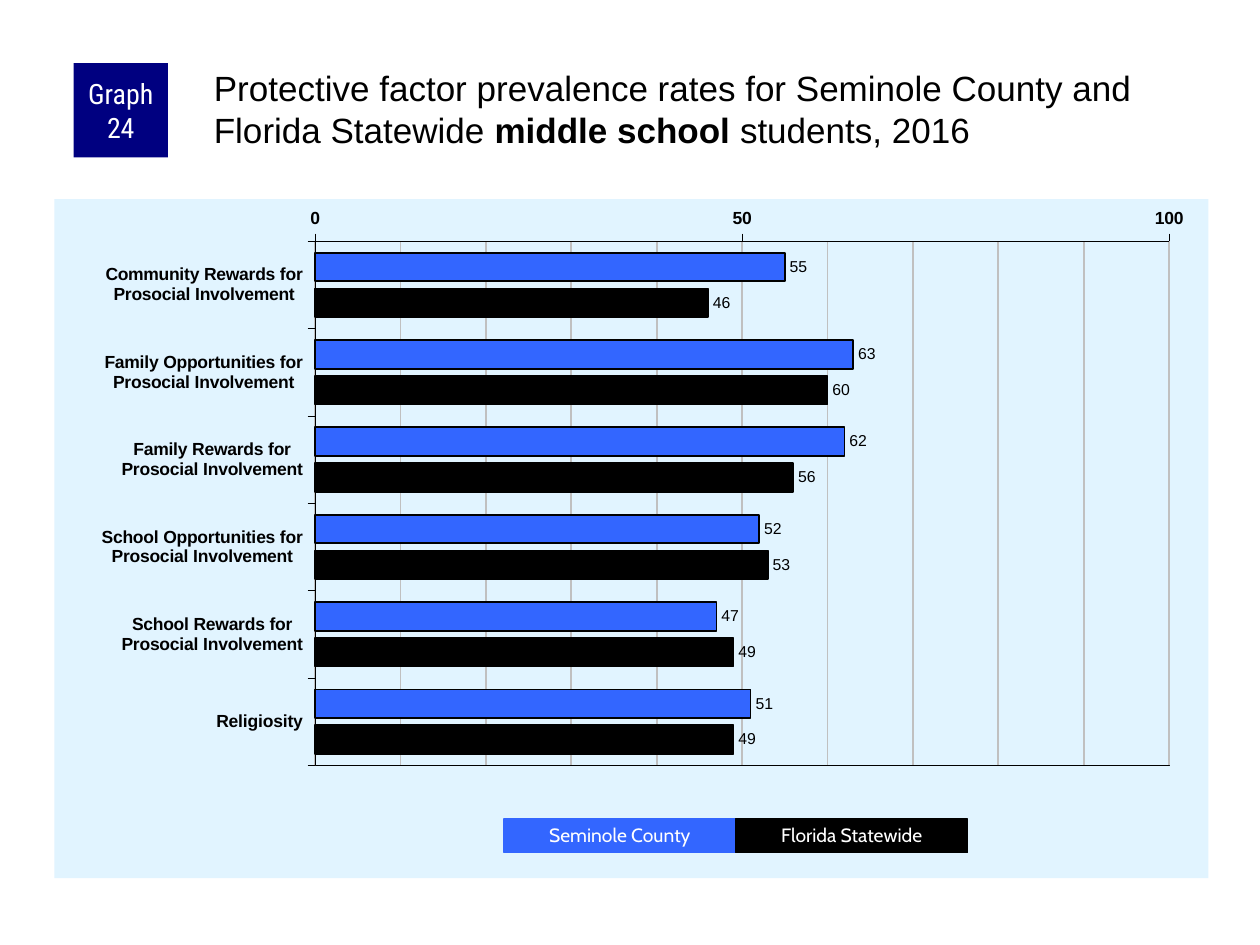
from copy import deepcopy
from dataclasses import dataclass

from pptx import Presentation
from pptx.chart.data import CategoryChartData
from pptx.dml.color import RGBColor as RGB
from pptx.enum.chart import XL_AXIS_CROSSES as Crosses
from pptx.enum.chart import XL_CHART_TYPE as ChartType
from pptx.enum.chart import XL_LABEL_POSITION as LabelPos
from pptx.enum.chart import XL_TICK_LABEL_POSITION as TickLabels
from pptx.enum.chart import XL_TICK_MARK as Tick
from pptx.enum.shapes import MSO_SHAPE as Shape
from pptx.enum.text import MSO_ANCHOR as Anchor
from pptx.enum.text import MSO_AUTO_SIZE as AutoSize
from pptx.enum.text import PP_ALIGN as Align
from pptx.oxml import parse_xml
from pptx.oxml.ns import nsdecls, qn
from pptx.util import Pt


@dataclass(frozen=True)
class Theme:
    """Colours, fonts and type sizes of the slide."""
    ink: str = "000000"
    paper: str = "FFFFFF"
    badge: str = "000080"
    county: str = "3366FF"
    state: str = "000000"
    panel: str = "E1F4FF"
    grid: str = "C0C0C0"
    body_font: str = "Arial"
    badge_font: str = "Roboto Condensed"
    legend_font: str = "Cabin"
    title_size: float = 20
    badge_size: float = 16
    legend_size: float = 11
    chart_size: float = 11.8
    axis_size: float = 10
    label_size: float = 9


T = Theme()
FACTORS = [
    ("Community Rewards for\nProsocial Involvement", 55, 46),
    ("Family Opportunities for\nProsocial Involvement", 63, 60),
    ("Family Rewards for\nProsocial Involvement", 62, 56),
    ("School Opportunities for\nProsocial Involvement", 52, 53),
    ("School Rewards for\nProsocial Involvement", 47, 49),
    ("Religiosity", 51, 49),
]
REGIONS = [("Seminole County", T.county), ("Florida Statewide", T.state)]
TITLE = [
    ("Protective factor prevalence rates for Seminole County and Florida Statewide ", False),
    ("middle school ", True),
    ("students, 2016", False),
]
PLOT = {"x": 0.226, "y": 0.062, "w": 0.74, "h": 0.772}


def set_font(font, name, size, color, bold=False):
    """Format a font."""
    font.name, font.size, font.bold = name, Pt(size), bold
    font.color.rgb = RGB.from_string(color)


def set_line(line, color, width):
    """Give a line its colour and width."""
    line.color.rgb = RGB.from_string(color)
    line.width = Pt(width)


def set_insets(tf, left, top, right, bottom):
    """Set the margins of a text frame in points."""
    tf.margin_left, tf.margin_top = Pt(left), Pt(top)
    tf.margin_right, tf.margin_bottom = Pt(right), Pt(bottom)


def add_box(s, box, text, fill, font, size):
    """Add a filled rectangle with centred text."""
    sp = s.shapes.add_shape(Shape.RECTANGLE, *map(Pt, box))
    sp.shadow.inherit = False
    sp.fill.solid()
    sp.fill.fore_color.rgb = RGB.from_string(fill)
    sp.line.fill.background()
    tf = sp.text_frame
    tf.word_wrap, tf.vertical_anchor = True, Anchor.MIDDLE
    p = tf.paragraphs[0]
    p.text, p.alignment = text, Align.CENTER
    set_font(p.runs[0].font, font, size, T.paper)
    return sp


def add_badge(s, box):
    """Add the graph number badge."""
    sp = add_box(s, box, "Graph 24", T.badge, T.badge_font, T.badge_size)
    set_insets(sp.text_frame, 3.6, 0, 3.6, 0)


def add_title(s, box):
    """Place and fill the title placeholder."""
    sp = s.shapes.title
    sp.left, sp.top, sp.width, sp.height = map(Pt, box)
    tf = sp.text_frame
    tf.word_wrap, tf.auto_size = True, AutoSize.NONE
    tf.vertical_anchor = Anchor.TOP
    set_insets(tf, 2.2, 2.2, 0, 0)
    p = tf.paragraphs[0]
    p.alignment = Align.LEFT
    for text, bold in TITLE:
        r = p.add_run()
        r.text = text
        set_font(r.font, T.body_font, T.title_size, T.ink, bold)


def add_legend(s, box):
    """Add one coloured key per region, side by side."""
    left, top, width, height = box
    step = width / len(REGIONS)
    for i, (name, color) in enumerate(REGIONS):
        key = (left + i * step, top, step, height)
        sp = add_box(s, key, name, color, T.legend_font, T.legend_size)
        set_line(sp.line, color, 0.75)
        sp.text_frame.paragraphs[0].line_spacing = 0.9


def format_axis(axis):
    """Apply the shared axis style."""
    axis.major_tick_mark, axis.minor_tick_mark = Tick.OUTSIDE, Tick.NONE
    axis.tick_label_position = TickLabels.NEXT_TO_AXIS
    set_font(axis.tick_labels.font, T.body_font, T.axis_size, T.ink, True)
    set_line(axis.format.line, T.ink, 0.25)


def format_grid(chart):
    """Draw major and minor gridlines in the same style."""
    val = chart.value_axis
    val.has_major_gridlines = val.has_minor_gridlines = True
    set_line(val.major_gridlines.format.line, T.grid, 1)
    axis = chart.element.find(f".//{qn('c:valAx')}")
    style = axis.find(qn("c:majorGridlines")).find(qn("c:spPr"))
    axis.find(qn("c:minorGridlines")).append(deepcopy(style))


def format_areas(chart):
    """Fill the chart panel, then fix and outline the inner plot area."""
    frame = chart.element.find(qn("c:chart"))
    frame.addnext(parse_xml(
        f'<c:spPr {nsdecls("c", "a")}><a:solidFill><a:srgbClr val="{T.panel}"/>'
        '</a:solidFill><a:ln><a:noFill/></a:ln></c:spPr>'))
    area = frame.find(qn("c:plotArea"))
    for old in area.findall(qn("c:layout")):
        area.remove(old)
    modes = "".join(f'<c:{k}Mode val="edge"/>' for k in "xy")
    sizes = "".join(f'<c:{k} val="{v}"/>' for k, v in PLOT.items())
    area.insert(0, parse_xml(
        f'<c:layout {nsdecls("c")}><c:manualLayout><c:layoutTarget val="inner"/>'
        f'{modes}{sizes}</c:manualLayout></c:layout>'))
    area.append(parse_xml(
        f'<c:spPr {nsdecls("c", "a")}><a:noFill/><a:ln w="{Pt(0.25)}"><a:solidFill>'
        f'<a:srgbClr val="{T.ink}"/></a:solidFill></a:ln></c:spPr>'))


def add_rates_chart(s, box):
    """Add the clustered bar chart of prevalence rates."""
    names, *rates = zip(*FACTORS)
    data = CategoryChartData()
    data.categories = names
    for (region, _), values in zip(REGIONS, rates):
        data.add_series(region, values)
    chart = s.shapes.add_chart(ChartType.BAR_CLUSTERED, *map(Pt, box), data).chart
    chart.has_legend = chart.has_title = False
    set_font(chart.font, T.body_font, T.chart_size, T.ink)
    plot = chart.plots[0]
    plot.gap_width, plot.overlap, plot.vary_by_categories = 80, -25, False
    for series, (_, color) in zip(plot.series, REGIONS):
        series.format.fill.solid()
        series.format.fill.fore_color.rgb = RGB.from_string(color)
        set_line(series.format.line, T.ink, 1)
        labels = series.data_labels
        labels.show_value, labels.position = True, LabelPos.OUTSIDE_END
        set_font(labels.font, T.body_font, T.label_size, T.ink)
    cat, val = chart.category_axis, chart.value_axis
    for axis in (cat, val):
        format_axis(axis)
    cat.reverse_order, cat.crosses = True, Crosses.MAXIMUM
    val.minimum_scale, val.maximum_scale = 0, 100
    val.major_unit, val.minor_unit = 50, 10
    format_grid(chart)
    format_areas(chart)


def main():
    """Build and save the slide."""
    prs = Presentation()
    prs.slide_width, prs.slide_height = Pt(720), Pt(540)
    s = prs.slides.add_slide(prs.slide_layouts[5])
    add_rates_chart(s, (31, 113.8, 659.5, 388))
    add_badge(s, (42, 36, 54, 54))
    add_title(s, (120, 36, 570, 60))
    add_legend(s, (288, 468, 265, 19.4))
    prs.save("out.pptx")


if __name__ == "__main__":
    main()
